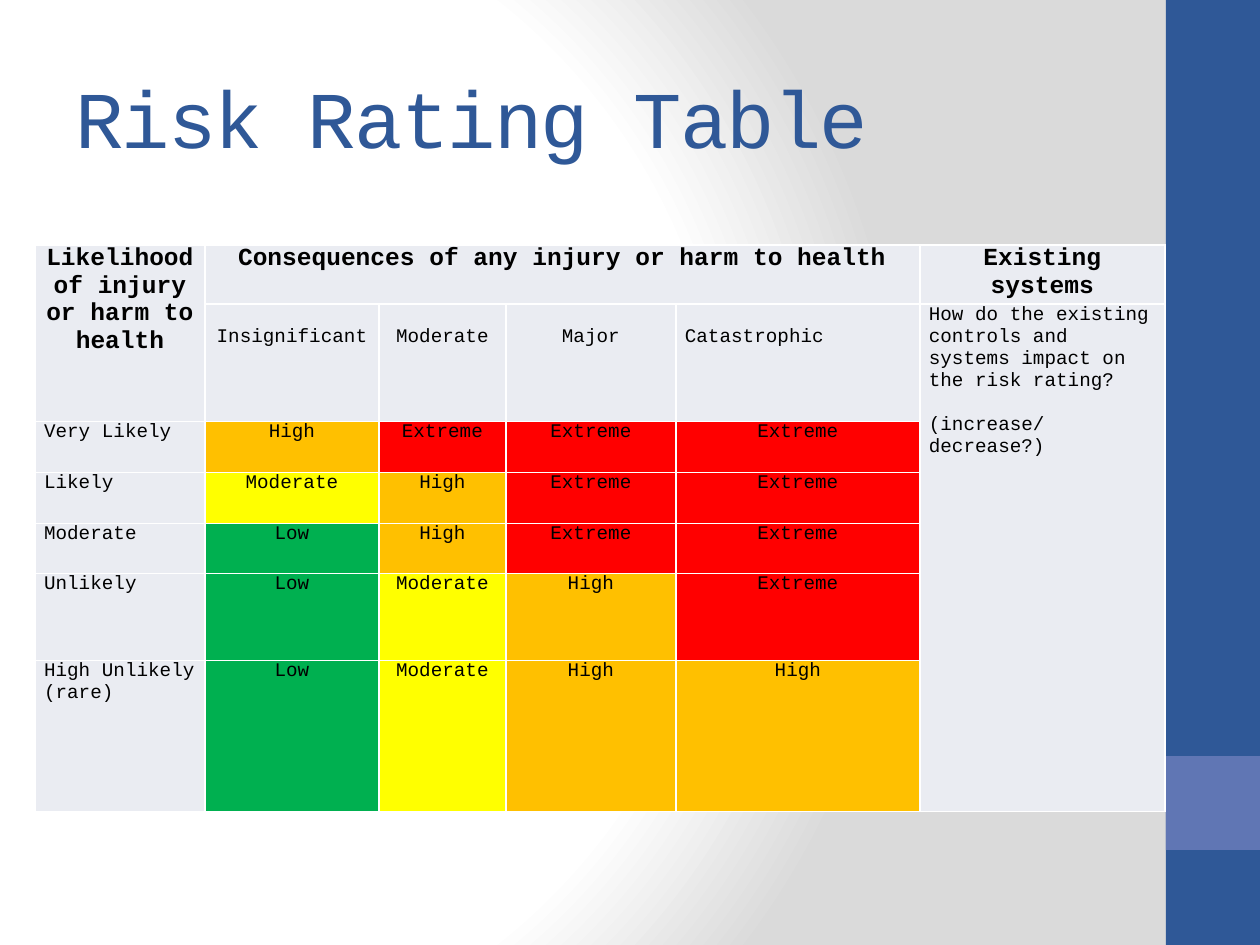
from lxml import etree
from pptx import Presentation
from pptx.dml.color import RGBColor
from pptx.enum.shapes import MSO_SHAPE
from pptx.enum.text import MSO_ANCHOR, PP_ALIGN
from pptx.oxml import parse_xml
from pptx.oxml.ns import nsdecls, qn
from pptx.util import Emu, Pt

RECTANGLE = MSO_SHAPE.RECTANGLE
MIDDLE = MSO_ANCHOR.MIDDLE
LEFT, CENTER = PP_ALIGN.LEFT, PP_ALIGN.CENTER

SCALE = 914400 / 126
FONT = "Courier New"
COLORS = {
    "blue": "2F5897", "accent": "6076B4", "white": "FFFFFF", "gray": "DADADA",
    "black": "000000", "label": "EAECF2", "Low": "00B050", "Moderate": "FFFF00",
    "High": "FFC000", "Extreme": "FF0000",
}

TITLE = "Risk Rating Table"
SIDEBAR = [((1166, 0, 94, 945), "blue"), ((1166, 756, 94, 94), "accent")]
HEADINGS = [
    (0, "Likelihood of injury or harm to health"),
    (1, "Consequences of any injury or harm to health"),
    (5, "Existing systems"),
]
CONSEQUENCES = [
    ("Insignificant", CENTER), ("Moderate", CENTER), ("Major", CENTER), ("Catastrophic", LEFT),
]
QUESTIONS = ["How do the existing controls and systems impact on the risk rating?",
             "(increase/decrease?)"]
RATINGS = [
    ("Very Likely", ["High", "Extreme", "Extreme", "Extreme"]),
    ("Likely", ["Moderate", "High", "Extreme", "Extreme"]),
    ("Moderate", ["Low", "High", "Extreme", "Extreme"]),
    ("Unlikely", ["Low", "Moderate", "High", "Extreme"]),
    ("High Unlikely (rare)", ["Low", "Moderate", "High", "High"]),
]
COLUMN_WIDTHS = [170, 174, 127, 170, 244, 245]
ROW_HEIGHTS = [55, 110, 51, 51, 50, 87, 151]
MERGES = [((0, 0), (1, 0)), ((0, 1), (0, 4)), ((1, 5), (6, 5))]
TABLE_LEFT, TABLE_TOP = 35, 245
CELL_MARGIN, LINE_GAP = 9, 22
HEADING = {"size": Pt(14), "bold": True}
BODY = {"size": Pt(11), "bold": False}


def px(length):
    return Emu(round(length * SCALE))


def rgb(name):
    return RGBColor.from_string(COLORS[name])


def write(paragraph, text, color, font_format):
    run = paragraph.add_run()
    run.text = text
    run.font.color.rgb = rgb(color)
    for key, value in {"name": FONT, **font_format}.items():
        setattr(run.font, key, value)
    return run


def set_background(slide):
    slide.background.fill.solid()
    solid = slide.background._cSld.find(".//" + qn("a:solidFill"))
    stops = "".join(
        f'<a:gs pos="{position * 1000}"><a:srgbClr val="{COLORS[color]}"/></a:gs>'
        for position, color in [(0, "white"), (75, "white"), (100, "gray")]
    )
    gradient = parse_xml(
        f'<a:gradFill {nsdecls("a")} rotWithShape="1"><a:gsLst>{stops}</a:gsLst>'
        '<a:path path="circle"><a:fillToRect l="20000" t="50000" r="100000" b="50000"/>'
        '</a:path></a:gradFill>'
    )
    solid.getparent().replace(solid, gradient)


def add_sidebar(slide):
    for box, color in SIDEBAR:
        shape = slide.shapes.add_shape(RECTANGLE, *map(px, box))
        shape.shadow.inherit = False
        shape.fill.solid()
        shape.fill.fore_color.rgb = rgb(color)
        shape.line.fill.background()


def add_title(slide):
    frame = slide.shapes.add_textbox(px(63), px(38), px(1050), px(157)).text_frame
    frame.word_wrap = True
    frame.vertical_anchor = MIDDLE
    run = write(frame.paragraphs[0], TITLE, "blue", {"size": Pt(46)})
    run.font._element.set("spc", "-100")


def style_cell(cell, color):
    margins = {"margin_left": CELL_MARGIN, "margin_right": CELL_MARGIN,
               "margin_top": 0, "margin_bottom": 0}
    for key, value in margins.items():
        setattr(cell, key, px(value))
    properties = cell._tc.get_or_add_tcPr()
    for side in ("lnL", "lnR", "lnT", "lnB"):
        border = etree.SubElement(properties, qn(f"a:{side}"), w=str(Pt(1)))
        fill = etree.SubElement(border, qn("a:solidFill"))
        etree.SubElement(fill, qn("a:srgbClr"), val=COLORS["white"])
    cell.fill.solid()
    cell.fill.fore_color.rgb = rgb(color)


def fill_cell(cell, texts, alignment, font_format):
    frame = cell.text_frame
    for index, text in enumerate(texts):
        paragraph = frame.add_paragraph() if index else frame.paragraphs[0]
        paragraph.alignment = alignment
        if index:
            paragraph.space_before = px(LINE_GAP)
        write(paragraph, text, "black", font_format)


def add_risk_table(slide):
    table = slide.shapes.add_table(
        len(ROW_HEIGHTS), len(COLUMN_WIDTHS), px(TABLE_LEFT), px(TABLE_TOP),
        px(sum(COLUMN_WIDTHS)), px(sum(ROW_HEIGHTS)),
    ).table
    table.first_row = table.horz_banding = False
    for column, width in zip(table.columns, COLUMN_WIDTHS):
        column.width = px(width)
    for row, height in zip(table.rows, ROW_HEIGHTS):
        row.height = px(height)
    for cell in table.iter_cells():
        style_cell(cell, "label")
    for first, last in MERGES:
        table.cell(*first).merge(table.cell(*last))

    for column, text in HEADINGS:
        fill_cell(table.cell(0, column), [text], CENTER, HEADING)
    for column, (text, alignment) in enumerate(CONSEQUENCES, 1):
        cell = table.cell(1, column)
        cell.margin_top = px(LINE_GAP)
        fill_cell(cell, [text], alignment, BODY)
    fill_cell(table.cell(1, 5), QUESTIONS, LEFT, BODY)
    for row, (likelihood, ratings) in enumerate(RATINGS, 2):
        fill_cell(table.cell(row, 0), [likelihood], LEFT, BODY)
        for column, rating in enumerate(ratings, 1):
            cell = table.cell(row, column)
            cell.fill.fore_color.rgb = rgb(rating)
            fill_cell(cell, [rating], CENTER, BODY)


def main():
    presentation = Presentation()
    presentation.slide_width, presentation.slide_height = px(1260), px(945)
    slide = presentation.slides.add_slide(presentation.slide_layouts[6])
    set_background(slide)
    add_sidebar(slide)
    add_title(slide)
    add_risk_table(slide)
    presentation.save("out.pptx")


if __name__ == "__main__":
    main()
